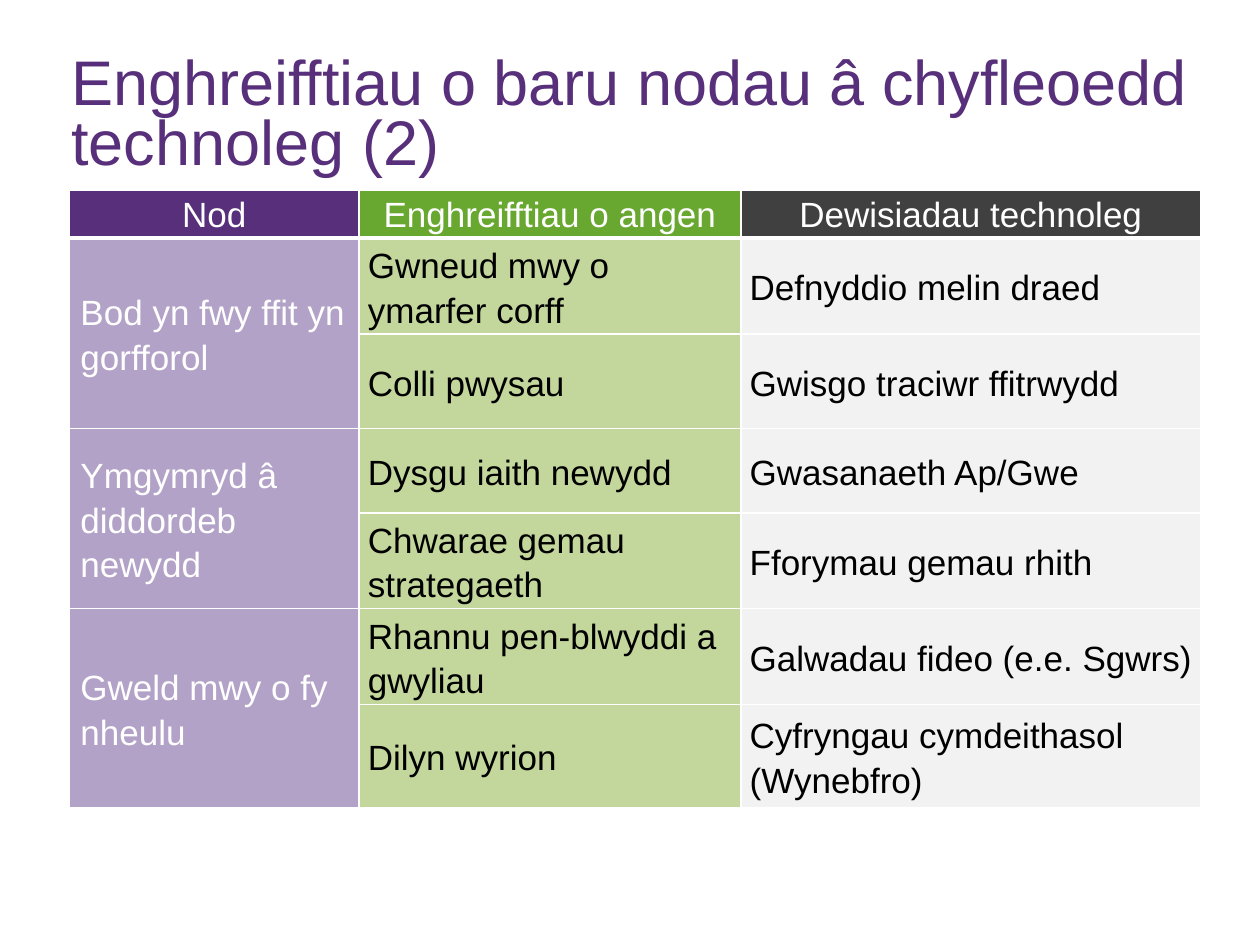
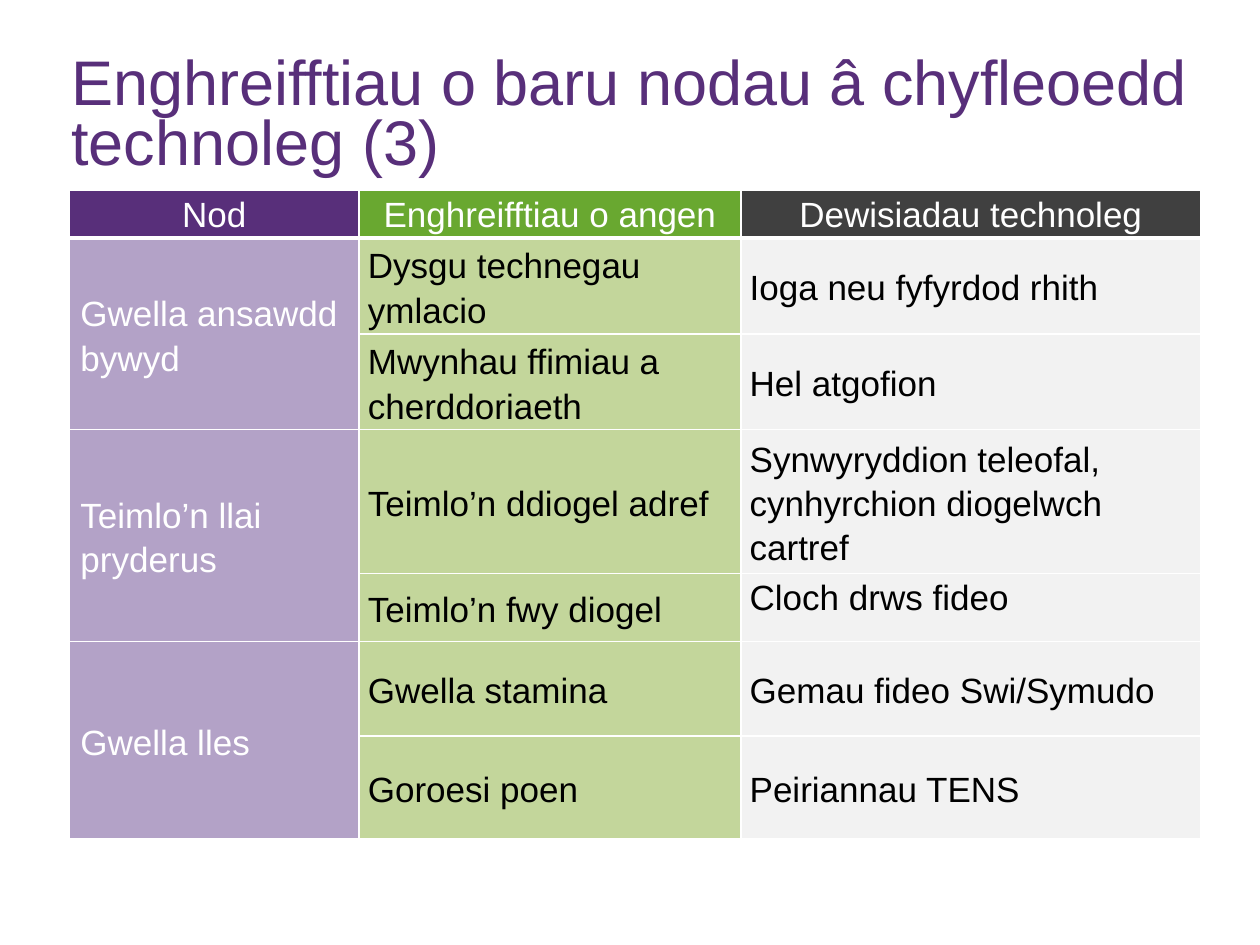
from lxml.etree import SubElement
from pptx import Presentation
from pptx.dml.color import RGBColor
from pptx.enum.text import MSO_ANCHOR, PP_ALIGN
from pptx.oxml.ns import qn
from pptx.util import Pt

PURPLE = RGBColor(0x58, 0x2F, 0x7A)
GREEN = RGBColor(0x69, 0xA8, 0x30)
CHARCOAL = RGBColor(0x40, 0x40, 0x40)
LILAC = RGBColor(0xB3, 0xA2, 0xC7)
PALE_GREEN = RGBColor(0xC3, 0xD6, 0x9B)
PALE_GREY = RGBColor(0xF2, 0xF2, 0xF2)
WHITE = RGBColor(0xFF, 0xFF, 0xFF)
BLACK = RGBColor(0x00, 0x00, 0x00)

FONT = "Arial"
HEADINGS = ["Nod", "Enghreifftiau o angen", "Dewisiadau technoleg"]
HEADING_FILLS = [PURPLE, GREEN, CHARCOAL]
BODY_FILLS = [LILAC, PALE_GREEN, PALE_GREY]
BODY_INKS = [WHITE, BLACK, BLACK]
COLUMN_WIDTHS = [165.6, 218.2, 262.8]
ROW_HEIGHTS = [26, 54, 54, 48.2, 38.9, 54, 59]

# Each page: number in the title, table height, then goal / need / technology
# An empty goal continues the goal above it
PAGES = [
    (2, 348, [
        ("Bod yn fwy ffit yn gorfforol", "Gwneud mwy o ymarfer corff", "Defnyddio melin draed"),
        ("", "Colli pwysau", "Gwisgo traciwr ffitrwydd"),
        ("Ymgymryd â diddordeb newydd", "Dysgu iaith newydd", "Gwasanaeth Ap/Gwe"),
        ("", "Chwarae gemau strategaeth", "Fforymau gemau rhith"),
        ("Gweld mwy o fy nheulu", "Rhannu pen-blwyddi a gwyliau", "Galwadau fideo (e.e. Sgwrs)"),
        ("", "Dilyn wyrion", "Cyfryngau cymdeithasol (Wynebfro)"),
    ]),
    (3, 366, [
        ("Gwella ansawdd bywyd", "Dysgu technegau ymlacio", "Ioga neu fyfyrdod rhith"),
        ("", "Mwynhau ffimiau a cherddoriaeth", "Hel atgofion"),
        ("Teimlo’n llai pryderus", "Teimlo’n ddiogel adref",
         "Synwyryddion teleofal, cynhyrchion diogelwch cartref"),
        ("", "Teimlo’n fwy diogel", "Cloch drws fideo"),
        ("Gwella lles", "Gwella stamina", "Gemau fideo Swi/Symudo"),
        ("", "Goroesi poen", "Peiriannau TENS"),
    ]),
]
TOP_ALIGNED = {"Cloch drws fideo", *HEADINGS}


def style_paragraph(para, size, color, spacing):
    para.line_spacing = spacing
    para.font.name = FONT
    para.font.size = Pt(size)
    para.font.bold = False
    para.font.color.rgb = color


def add_border(cell, side, width):
    line = SubElement(cell._tc.get_or_add_tcPr(), qn(f"a:ln{side}"), w=str(Pt(width)))
    SubElement(SubElement(line, qn("a:solidFill")), qn("a:srgbClr"), val=str(WHITE))


deck = Presentation()
deck.slide_width, deck.slide_height = Pt(720), Pt(540)

for number, table_height, goals in PAGES:
    page = deck.slides.add_slide(deck.slide_layouts[6])

    # Title
    title = page.shapes.add_textbox(Pt(33.8), Pt(27.5), Pt(652.3), Pt(79.2)).text_frame
    title.word_wrap = True
    title.vertical_anchor = MSO_ANCHOR.MIDDLE
    title.text = f"Enghreifftiau o baru nodau â chyfleoedd technoleg ({number})"
    style_paragraph(title.paragraphs[0], 36, PURPLE, 0.8)

    # Table of goals
    frame = page.shapes.add_table(len(ROW_HEIGHTS), len(COLUMN_WIDTHS), Pt(39.6), Pt(108.7),
                                  Pt(sum(COLUMN_WIDTHS)), Pt(table_height))
    table = frame.table
    table.first_row = table.horz_banding = False
    for column, width in zip(table.columns, COLUMN_WIDTHS):
        column.width = Pt(width)
    for row, height in zip(table.rows, ROW_HEIGHTS):
        row.height = Pt(height)
    frame.height = Pt(table_height)

    for r, texts in enumerate([HEADINGS, *goals]):
        heading = r == 0
        for c, text in enumerate(texts):
            cell = table.cell(r, c)
            cell.margin_left = cell.margin_right = Pt(5)
            cell.margin_top = cell.margin_bottom = 0
            cell.vertical_anchor = MSO_ANCHOR.TOP if text in TOP_ALIGNED else MSO_ANCHOR.MIDDLE
            for side in "LRTB":
                if (r, side) != (1, "T"):
                    add_border(cell, side, 3 if heading and side == "B" else 1)
            cell.fill.solid()
            cell.fill.fore_color.rgb = (HEADING_FILLS if heading else BODY_FILLS)[c]
            if not text:
                continue
            cell.text = text
            para = cell.text_frame.paragraphs[0]
            if heading:
                para.alignment = PP_ALIGN.CENTER
            elif c == 0:
                para._p.get_or_add_pPr().set("marL", str(Pt(1.4)))
            style_paragraph(para, 20, WHITE if heading else BODY_INKS[c], 1.14)

    # Each goal spans its two needs
    for r in range(1, len(ROW_HEIGHTS), 2):
        table.cell(r, 0).merge(table.cell(r + 1, 0))

deck.save("out.pptx")
